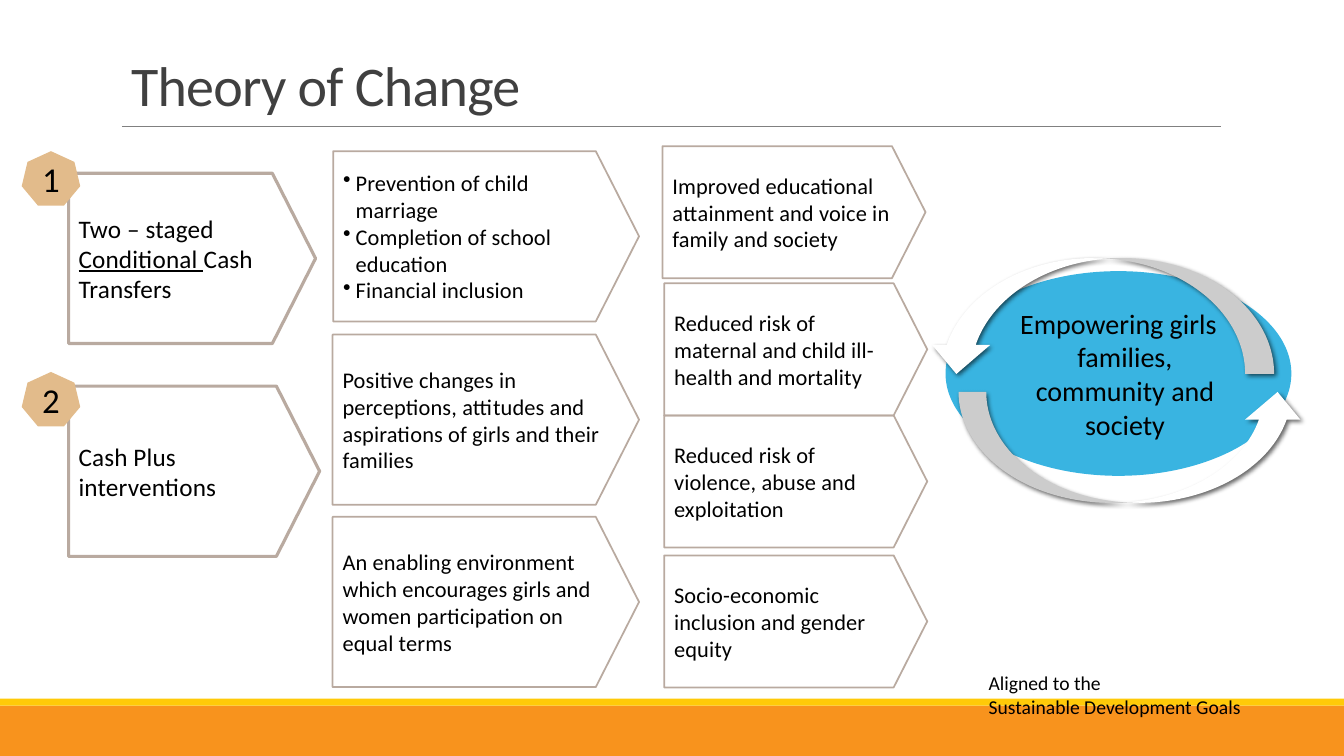
from lxml import etree
from pptx import Presentation
from pptx.dml.color import RGBColor
from pptx.enum import shapes, text
from pptx.oxml import ns
from pptx.util import Pt

KIND = shapes.MSO_SHAPE


def paint(format, colour):
    format.solid()
    format.fore_color.rgb = RGBColor.from_string(colour)


def draw(kind, box, fill=None, line=None, weight=1):
    shape = slide.shapes.add_shape(kind, *map(Pt, box))
    shape.shadow.inherit = False
    if fill:
        paint(shape.fill, fill)
    else:
        shape.fill.background()
    if line:
        paint(shape.line.fill, line)
        shape.line.width = Pt(weight)
    else:
        shape.line.fill.background()
    return shape


prs = Presentation()
prs.slide_width, prs.slide_height = Pt(960), Pt(540)
slide = prs.slides.add_slide(prs.slide_layouts[5])

draw(KIND.RECTANGLE, (0, 504, 960, 36), "F8931D")
draw(KIND.RECTANGLE, (0, 499, 960, 5), "FFCA08")
title_rule = slide.shapes.add_connector(
    shapes.MSO_CONNECTOR.STRAIGHT, Pt(87.1), Pt(90), Pt(872), Pt(90))
paint(title_rule.line.fill, "808080")
title_rule.line.width = Pt(0.5)
etree.SubElement(title_rule._element.spPr, ns.qn("a:effectLst"))

title = slide.shapes.title
title.left, title.top, title.width, title.height = map(Pt, (86.4, 26, 792, 62))
title.text_frame.text = "Theory of Change"
title.text_frame.vertical_anchor = text.MSO_ANCHOR.BOTTOM
heading = title.text_frame.paragraphs[0]
heading.alignment = text.PP_ALIGN.LEFT
heading.line_spacing = 0.85
heading.font.name, heading.font.size = "Calibri", Pt(40)
paint(heading.font.fill, "404040")
heading.runs[0].font._element.set("spc", "-50")

alignment_note = slide.shapes.add_textbox(Pt(699), Pt(476), Pt(204), Pt(41))
alignment_note.text_frame.word_wrap = False
alignment_note.text_frame.text = "Aligned to the\nSustainable Development Goals"
for line in alignment_note.text_frame.paragraphs:
    line.font.name, line.font.size = "Calibri", Pt(14)
    paint(line.font.fill, "000000")

goal = draw(KIND.OVAL, (675.4, 193.7, 247, 146.2), "39B4E1")
goal.text_frame.text = "Empowering girls families, community and society"
aim = goal.text_frame.paragraphs[0]
aim.alignment = text.PP_ALIGN.CENTER
aim.font.name, aim.font.size = "Calibri", Pt(20)
paint(aim.font.fill, "000000")
aim._p.get_or_add_pPr().set("marL", str(Pt(9.4)))
aim._p.get_or_add_pPr().set("indent", str(Pt(-9.4)))

for box, turn in [((684.7, 280, 247.7, 79.2), 0), ((662.4, 184.3, 247.7, 82.8), 180)]:
    cycle = draw(KIND.CURVED_UP_ARROW, box, "FFFFFF")
    cycle.rotation = turn
    effects = cycle._element.spPr.find(ns.qn("a:effectLst"))
    shade = etree.SubElement(
        effects, ns.qn("a:outerShdw"), blurRad=str(Pt(3.5)), dist=str(Pt(2)),
        dir="2700000", algn="tl", rotWithShape="0")
    black = etree.SubElement(shade, ns.qn("a:srgbClr"), val="000000")
    etree.SubElement(black, ns.qn("a:alpha"), val="60000")

inputs = [
    (49, 123.8, 176.4, "Two – staged _Conditional _Cash Transfers"),
    (49, 275.8, 179.3, "Cash Plus interventions"),
]
outcomes = [
    (238, 108, 218.5, "•Prevention of child marriage\n•Completion of school education\n•Financial inclusion"),
    (237.6, 239, 218.9, "Positive changes in perceptions, attitudes and aspirations of girls and their families"),
    (237.6, 369.2, 218.9, "An enabling environment which encourages girls and women participation on equal terms"),
]
impacts = [
    (473.2, 104.4, 187.9, "Improved educational attainment and voice in family and society"),
    (474.4, 202.4, 187.9, "Reduced risk of maternal and child ill-health and mortality"),
    (474.4, 296.7, 187.9, "Reduced risk of violence, abuse and exploitation"),
    (474.4, 396.7, 187.9, "Socio-economic inclusion and gender equity"),
]
for stage, height, size, weight in [
        (inputs, 121.6, 18, 2.25), (outcomes, 121.6, 16, 1.25), (impacts, 94.3, 16, 1.25)]:
    for left, top, width, wording in stage:
        step = draw(KIND.PENTAGON, (left, top, width, height), None, "B9AAA0", weight)
        step.adjustments[0] = 0.254
        frame = step.text_frame
        frame.vertical_anchor = text.MSO_ANCHOR.MIDDLE
        for index, entry in enumerate(wording.split("\n")):
            item = frame.add_paragraph() if index else frame.paragraphs[0]
            item.alignment = text.PP_ALIGN.LEFT
            item.font.name, item.font.size = "Calibri", Pt(size)
            paint(item.font.fill, "000000")
            if entry.startswith("•"):
                layout = item._p.get_or_add_pPr()
                layout.set("marL", str(Pt(9)))
                layout.set("indent", str(Pt(-9)))
                bullet = etree.Element(ns.qn("a:buChar"), char="•")
                layout.find(ns.qn("a:defRPr")).addprevious(bullet)
            for part, phrase in enumerate(entry.lstrip("•").split("_")):
                run = item.add_run()
                run.text = phrase
                run.font._element.set("spc", "10")
                if part % 2:
                    run.font.underline = True

for number, top in [("1", 108), ("2", 265.7)]:
    badge = draw(KIND.HEPTAGON, (15.5, top, 41.8, 38.9), "E2BB8B")
    frame = badge.text_frame
    frame.text = number
    frame.vertical_anchor = text.MSO_ANCHOR.MIDDLE
    digit = frame.paragraphs[0]
    digit.alignment = text.PP_ALIGN.CENTER
    digit.font.name, digit.font.size = "Calibri", Pt(24.9)
    paint(digit.font.fill, "000000")

prs.save("out.pptx")
